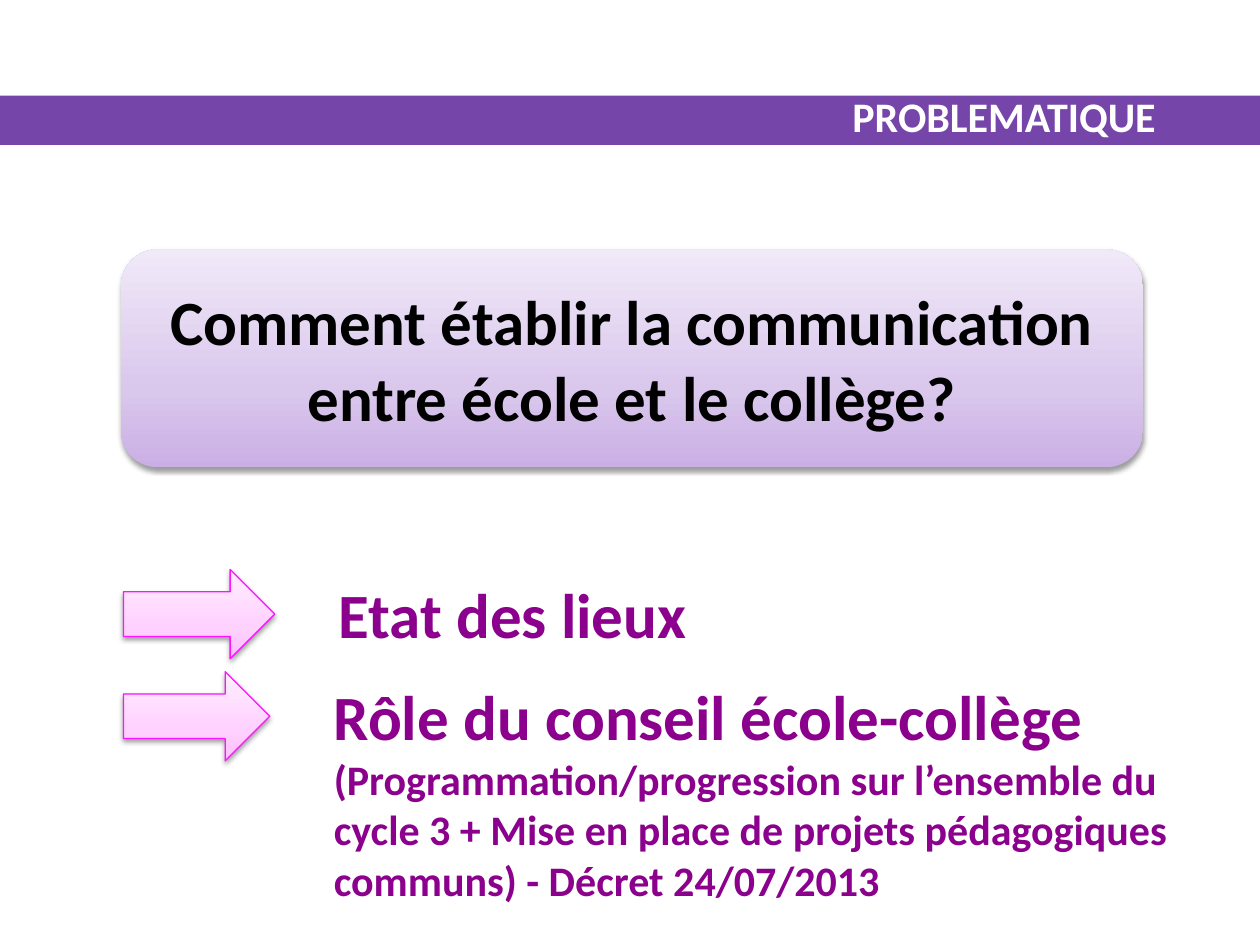
"""Build the "Problématique" slide with its key question and two themes."""
import dataclasses
import typing

import lxml.etree
import pptx
import pptx.dml.color
import pptx.enum.shapes
import pptx.enum.text
import pptx.oxml.ns
import pptx.util

Cm = pptx.util.Cm
Pt = pptx.util.Pt
Align = pptx.enum.text.PP_ALIGN
Anchor = pptx.enum.text.MSO_ANCHOR
Preset = pptx.enum.shapes.MSO_SHAPE
qn = pptx.oxml.ns.qn


@dataclasses.dataclass(frozen=True)
class Theme:
    """Hold the colours and type sizes of the slide."""
    font: str = "Calibri"
    band: str = "7545A9"
    heading: str = "FFFFFF"
    question: str = "000000"
    topic: str = "8B008C"
    arrow_line: str = "FE13FF"
    lilac: tuple[str, ...] = ("CAAFE5", "D9C7EC", "F0E9F8")
    pink: tuple[str, ...] = ("FFBDFF", "FFD1FF", "FFEEFF")
    stops: tuple[int, ...] = (0, 35, 100)
    large: int = 36
    small: int = 24


class Box(typing.NamedTuple):
    """Give a place and size in centimetres."""
    left: float
    top: float
    width: float
    height: float

    def lengths(self) -> list[int]:
        """Return the four values as lengths."""
        return [Cm(value) for value in self]


class Line(typing.NamedTuple):
    """Pair a paragraph's wording with its type size."""
    wording: str
    size: int


@dataclasses.dataclass(frozen=True)
class Topic:
    """Describe an arrow and the text it points to."""
    arrow: Box
    text: Box
    inset: float
    lines: tuple[Line, ...]


THEME = Theme()
HEADING = Line("PROBLEMATIQUE", THEME.small)
QUESTION = Line("Comment établir la communication entre école et le collège?", THEME.large)
TOPICS = (
    Topic(Box(2.49, 11.48, 3.05, 1.8), Box(6, 11.48, 16, 1.8), 0.83,
          (Line("Etat des lieux", THEME.large),)),
    Topic(Box(2.49, 13.54, 2.95, 1.8), Box(6.48, 13.54, 18.19, 4.88), 0.25,
          (Line("Rôle du conseil école-collège", THEME.large),
           Line("(Programmation/progression sur l’ensemble du cycle 3 + Mise en place "
                "de projets pédagogiques communs) - Décret 24/07/2013", THEME.small))),
)


def rgb(value: str) -> pptx.dml.color.RGBColor:
    """Turn a hex string into a colour."""
    return pptx.dml.color.RGBColor.from_string(value)


def write(frame, lines: typing.Sequence[Line], colour: str, align=Align.LEFT) -> None:
    """Write one bold paragraph per line."""
    frame.word_wrap = True
    for index, line in enumerate(lines):
        paragraph = frame.add_paragraph() if index else frame.paragraphs[0]
        paragraph.alignment = align
        run = paragraph.add_run()
        run.text = line.wording
        run.font.name = THEME.font
        run.font.size = Pt(line.size)
        run.font.bold = True
        run.font.color.rgb = rgb(colour)


def add_raised_shape(slide, preset, box: Box, colours: tuple[str, ...]):
    """Add a shape with a rising gradient and a soft shadow."""
    shape = slide.shapes.add_shape(preset, *box.lengths())
    shape.fill.gradient()
    shape.fill.gradient_angle = 90
    properties = shape.element.spPr
    stops = properties.find(".//" + qn("a:gsLst"))
    stops.clear()
    for position, colour in zip(THEME.stops, colours):
        stop = lxml.etree.SubElement(stops, qn("a:gs"), pos=str(position * 1000))
        lxml.etree.SubElement(stop, qn("a:srgbClr"), val=colour)
    shape.shadow.inherit = False
    shadow = lxml.etree.SubElement(
        properties.find(qn("a:effectLst")), qn("a:outerShdw"),
        blurRad=str(Pt(3.1)), dist=str(Pt(1.6)), dir="5400000", rotWithShape="0")
    tint = lxml.etree.SubElement(shadow, qn("a:srgbClr"), val="000000")
    lxml.etree.SubElement(tint, qn("a:alpha"), val="38000")
    return shape


def add_heading(slide) -> None:
    """Add the full-width band and its heading."""
    band = slide.shapes.add_shape(Preset.RECTANGLE, *Box(0, 1.93, 25.4, 0.99).lengths())
    band.shadow.inherit = False
    band.fill.solid()
    band.fill.fore_color.rgb = rgb(THEME.band)
    band.line.fill.background()
    frame = slide.shapes.add_textbox(*Box(4.5, 0.71, 19.05, 2.26).lengths()).text_frame
    frame.vertical_anchor = Anchor.BOTTOM
    write(frame, [HEADING], THEME.heading, Align.RIGHT)


def add_question(slide) -> None:
    """Add the rounded panel with the key question."""
    panel = add_raised_shape(
        slide, Preset.ROUNDED_RECTANGLE, Box(2.44, 5.03, 20.6, 4.39), THEME.lilac)
    panel.line.fill.background()
    frame = panel.text_frame
    frame.margin_left = frame.margin_right = Cm(0.05)
    frame.margin_top = frame.margin_bottom = Cm(0.05)
    frame.vertical_anchor = Anchor.MIDDLE
    write(frame, [QUESTION], THEME.question, Align.CENTER)


def add_topic(slide, topic: Topic) -> None:
    """Add an arrow with its text."""
    arrow = add_raised_shape(slide, Preset.RIGHT_ARROW, topic.arrow, THEME.pink)
    arrow.line.color.rgb = rgb(THEME.arrow_line)
    arrow.line.width = Pt(0.75)
    frame = slide.shapes.add_textbox(*topic.text.lengths()).text_frame
    frame.margin_left = Cm(topic.inset)
    write(frame, topic.lines, THEME.topic)


def main() -> None:
    """Build and save the slide."""
    deck = pptx.Presentation()
    deck.slide_width, deck.slide_height = Cm(25.4), Cm(19.05)
    slide = deck.slides.add_slide(deck.slide_layouts[6])
    add_heading(slide)
    add_question(slide)
    for topic in TOPICS:
        add_topic(slide, topic)
    deck.save("out.pptx")


if __name__ == "__main__":
    main()
